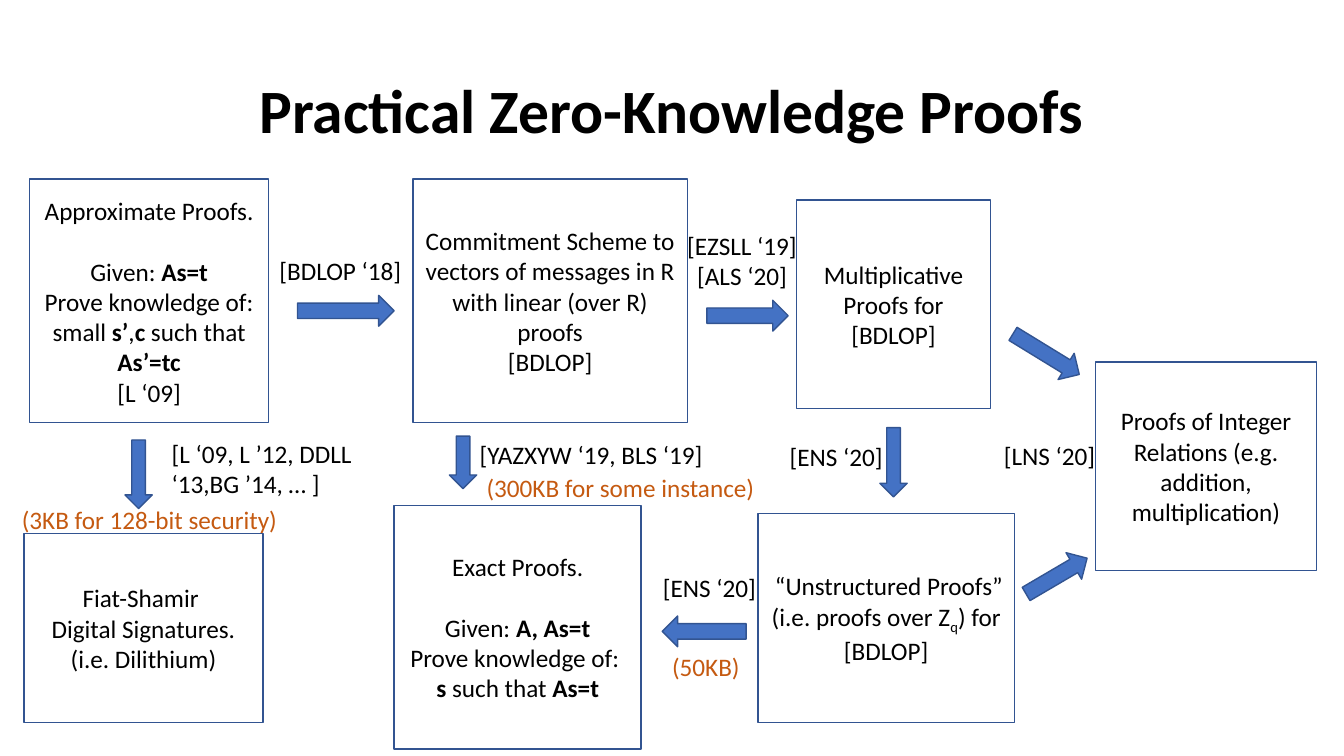
from pptx import Presentation
from pptx.dml.color import RGBColor
from pptx.enum import shapes, text
from pptx.util import Pt

FONT, SIZE = "Calibri", 18
BLACK, WHITE, BLUE, NAVY, RUST = "000000", "FFFFFF", "4472C4", "325491", "C55A11"
LEFT, MID = text.PP_ALIGN.LEFT, text.PP_ALIGN.CENTER
GAP = 22  # one line of body text

# left, top, width, height, paragraphs
BOXES = [
    (21, 128, 171, 174, ["Approximate Proofs.", "^Given: |*As=t",
                         "Prove knowledge of: small |*s’|,|*c| such that |*As’=tc",
                         "[L ‘09]"]),
    (17, 381, 171, 135, ["Fiat-Shamir ", "Digital Signatures.", "(i.e. Dilithium)"]),
    (295, 128, 196, 174, ["Commitment Scheme to vectors of messages in R "
                          "with linear (over R) proofs", "[BDLOP]"]),
    (281.5, 361, 176.5, 174, ["Exact Proofs.", "^Given: |*A, As=t",
                              "Prove knowledge of: ", "*s| such that |*As=t"]),
    (569, 143, 138.5, 149, ["Multiplicative Proofs for [BDLOP]"]),
    (541.5, 367, 183, 149, [" “Unstructured Proofs” (i.e. proofs over Z|_q|) for [BDLOP]"]),
    (782.5, 258.5, 158, 149, ["Proofs of Integer Relations (e.g. addition, multiplication)"]),
]

# left, top, width, height, turn in degrees
ARROWS = [
    (74.5, 329, 49, 19.5, 90),
    (212.5, 211, 69, 22, 0),
    (505, 214.5, 58, 22, 0),
    (312, 320.5, 37.5, 19.5, 90),
    (473, 440, 60, 22, 180),
    (613.5, 320.5, 49.5, 19.5, 90),
    (729.5, 400.5, 50.5, 22, 329.6),
    (719.5, 242, 55.5, 22, 31.5),
]

# left, top, width, height, paragraphs, colour, alignment
LABELS = [
    (335.5, 310.5, 178.5, 29, ["[YAZXYW ‘19, BLS ‘19]"], BLACK, LEFT),
    (192.5, 179, 103, 29, ["[BDLOP ‘18]"], BLACK, LEFT),
    (115.5, 309.5, 146, 51, ["[L ‘09, L ’12, DDLL ‘13,BG ’14, … ]"], BLACK, LEFT),
    (481, 161, 98, 51, ["[EZSLL ‘19]", "[ALS ‘20]"], BLACK, MID),
    (710, 311, 89, 29, ["[LNS ‘20]"], BLACK, LEFT),
    (557, 311.5, 89, 29, ["[ENS ‘20]"], BLACK, LEFT),
    (466.5, 405, 86, 29, ["[ENS ‘20]"], BLACK, LEFT),
    (340.5, 334, 219.5, 29, ["(300KB for some instance)"], RUST, LEFT),
    (473, 462, 84, 29, ["(50KB)"], RUST, LEFT),
    (8.5, 357, 204, 29, ["(3KB for 128-bit security)"], RUST, LEFT),
]


def rgb(code):
    return RGBColor.from_string(code)


def write(frame, paras, color=BLACK, align=MID, size=SIZE):
    """Fill a frame; | parts runs, * is bold, _ is subscript, ^ leaves a gap above."""
    frame.word_wrap = True
    for i, line in enumerate(paras):
        para = frame.add_paragraph() if i else frame.paragraphs[0]
        para.alignment = align
        font = para.font
        font.name, font.size = FONT, Pt(size)
        font.color.rgb = rgb(color)
        if line.startswith("^"):
            para.space_before = Pt(GAP)
        for part in line.lstrip("^").split("|"):
            run = para.add_run()
            run.text = part.lstrip("*_")
            if part.startswith("*"):
                run.font.bold = True
            elif part.startswith("_"):
                run.font._element.set("baseline", "-25000")


def draw(slide, kind, area, fill):
    shape = slide.shapes.add_shape(kind, *map(Pt, area))
    shape.shadow.inherit = False
    shape.fill.solid()
    shape.fill.fore_color.rgb = rgb(fill)
    shape.line.color.rgb = rgb(NAVY)
    shape.line.width = Pt(1)
    return shape


def box(slide, *area, paras):
    shape = draw(slide, shapes.MSO_SHAPE.RECTANGLE, area, WHITE)
    shape.text_frame.vertical_anchor = text.MSO_ANCHOR.MIDDLE
    write(shape.text_frame, paras)


def arrow(slide, *area, turn):
    draw(slide, shapes.MSO_SHAPE.RIGHT_ARROW, area, BLUE).rotation = turn


def label(slide, *area, paras, **style):
    frame = slide.shapes.add_textbox(*map(Pt, area)).text_frame
    write(frame, paras, **style)
    return frame


def title(slide):
    frame = label(slide, 66, 29, 828, 104.5,
                  paras=["*Practical Zero-Knowledge Proofs"], size=44)
    frame.vertical_anchor = text.MSO_ANCHOR.MIDDLE
    frame.paragraphs[0].line_spacing = 0.9


def main():
    deck = Presentation()
    deck.slide_width, deck.slide_height = Pt(960), Pt(540)
    slide = deck.slides.add_slide(deck.slide_layouts[6])
    title(slide)
    for *area, paras in BOXES:
        box(slide, *area, paras=paras)
    for *area, turn in ARROWS:
        arrow(slide, *area, turn=turn)
    for *area, paras, color, align in LABELS:
        label(slide, *area, paras=paras, color=color, align=align)
    deck.save("out.pptx")


if __name__ == "__main__":
    main()
